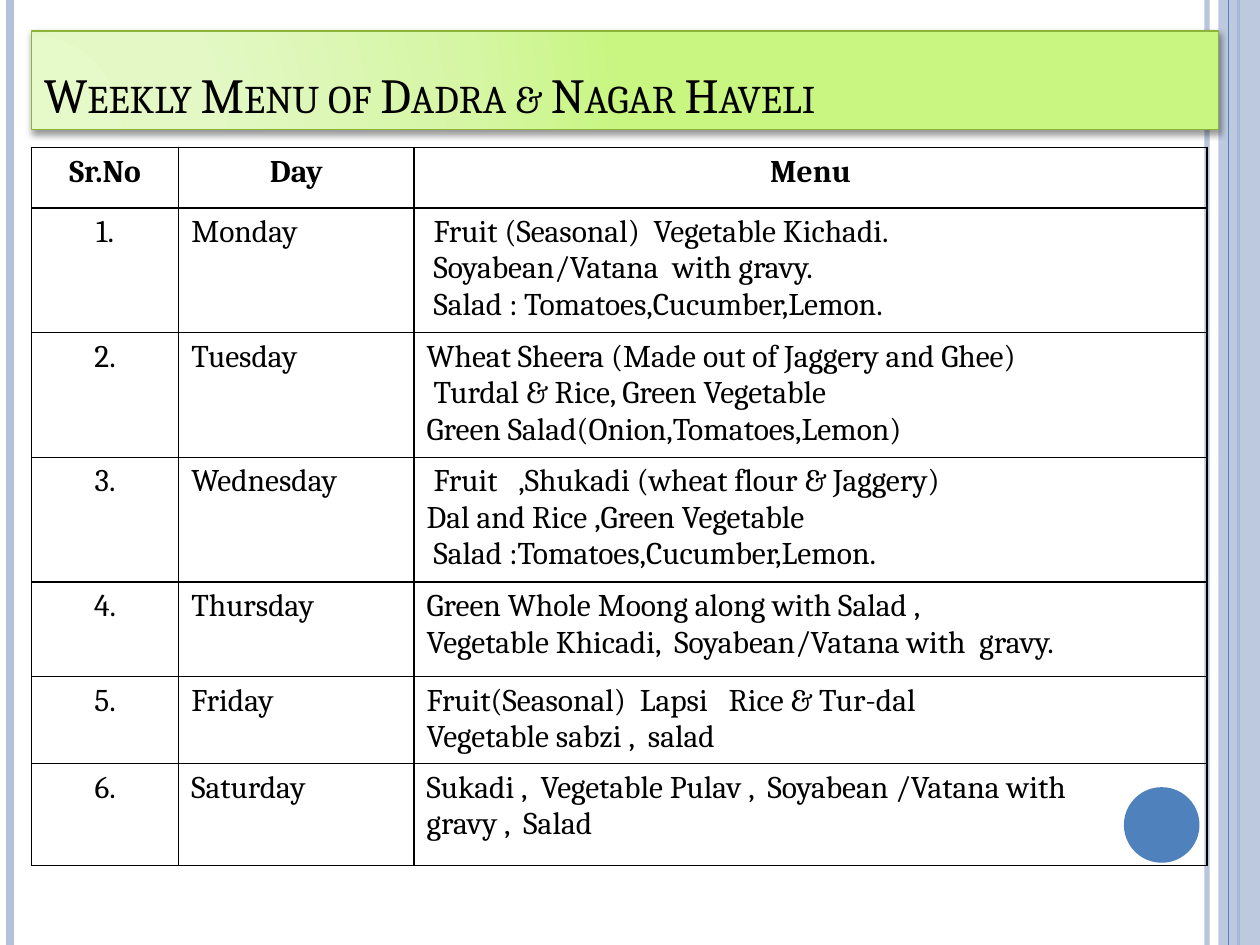
from lxml import etree
from pptx import Presentation
from pptx.dml.color import RGBColor
from pptx.enum.shapes import MSO_CONNECTOR, MSO_SHAPE
from pptx.enum.text import MSO_ANCHOR, PP_ALIGN
from pptx.oxml import parse_xml
from pptx.oxml.ns import nsdecls, qn
from pptx.util import Inches, Pt

STRAIGHT = MSO_CONNECTOR.STRAIGHT
RECTANGLE, OVAL = MSO_SHAPE.RECTANGLE, MSO_SHAPE.OVAL
BOTTOM = MSO_ANCHOR.BOTTOM
LEFT, CENTER, JUSTIFY = PP_ALIGN.LEFT, PP_ALIGN.CENTER, PP_ALIGN.JUSTIFY

FONT = "Cambria"
WIDTH, HEIGHT = Inches(10), Inches(7.5)
COLORS = {"pale": "B3C1DB", "blue": "4F81BD", "border": "8CB537", "ink": "000000"}
TITLE_STOPS = {0: "E5F9C9", 30: "E3F8C4", 75: "D5F6A3", 100: "C8F680"}

COLUMN_WIDTHS = [1.17, 1.87, 6.3]
ROW_HEIGHTS = [0.48, 0.99, 0.99, 0.99, 0.75, 0.69, 0.81]
HEADINGS = ["Sr.No", "Day", "Menu"]
MENU = [
    ("Monday", JUSTIFY, [" Fruit (Seasonal)  Vegetable Kichadi.",
                         " Soyabean/Vatana  with gravy.",
                         " Salad : Tomatoes,Cucumber,Lemon."]),
    ("Tuesday", JUSTIFY, ["Wheat Sheera (Made out of Jaggery and Ghee)",
                          " Turdal & Rice, Green Vegetable",
                          "Green Salad(Onion,Tomatoes,Lemon)"]),
    ("Wednesday", JUSTIFY, [" Fruit   ,Shukadi (wheat flour & Jaggery)",
                            "Dal and Rice ,Green Vegetable",
                            " Salad :Tomatoes,Cucumber,Lemon."]),
    ("Thursday", JUSTIFY, ["Green Whole Moong along with Salad ,",
                           "Vegetable Khicadi,  Soyabean/Vatana with  gravy."]),
    ("Friday", LEFT, ["Fruit(Seasonal)  Lapsi   Rice & Tur-dal",
                      "Vegetable sabzi ,  salad"]),
    ("Saturday", LEFT, ["Sukadi ,  Vegetable Pulav ,  Soyabean /Vatana with",
                        "gravy ,  Salad"]),
]


def to_emu(box):
    """Turn shares of the slide (left, top, width, height) into lengths."""
    return [round(share * side) for share, side in zip(box, (WIDTH, HEIGHT) * 2)]


def color(name):
    return RGBColor.from_string(COLORS[name])


def set_alpha(color_parent, percent):
    for element in color_parent.iter(qn("a:srgbClr")):
        etree.SubElement(element, qn("a:alpha")).set("val", str(percent * 1000))


def style_font(paragraph, size, bold=False):
    font = paragraph.font
    font.name, font.size, font.bold = FONT, Pt(size), bold
    font.color.rgb = color("ink")


def add_vertical_line(slide, x_share, color_name, weight, alpha=100):
    x = round(x_share * WIDTH)
    line = slide.shapes.add_connector(STRAIGHT, x, 0, x, HEIGHT)
    line.line.color.rgb = color(color_name)
    line.line.width = Pt(weight)
    properties = line._element.spPr
    if alpha < 100:
        set_alpha(properties, alpha)
    etree.SubElement(properties, qn("a:effectLst"))


def add_plain_shape(slide, kind, box, color_name):
    shape = slide.shapes.add_shape(kind, *to_emu(box))
    shape.shadow.inherit = False
    shape.fill.solid()
    shape.fill.fore_color.rgb = color(color_name)
    shape.line.fill.background()
    return shape


def add_side_decoration(slide):
    add_vertical_line(slide, 0.958, "pale", 3, alpha=93)
    add_vertical_line(slide, 0.008, "pale", 4.5)
    add_vertical_line(slide, 0.983, "blue", 1.5)
    band = add_plain_shape(slide, RECTANGLE, (0.967, 0, 0.033, 1), "pale")
    set_alpha(band._element.spPr, 87)
    add_vertical_line(slide, 0.975, "blue", 0.75)
    add_plain_shape(slide, OVAL, (0.892, 0.833, 0.06, 0.08), "blue")


def add_title(slide, box, text):
    banner = slide.shapes.add_shape(RECTANGLE, *to_emu(box))
    banner.shadow.inherit = False
    banner.fill.background()
    banner.line.color.rgb = color("border")
    banner.line.width = Pt(1)

    properties = banner._element.spPr
    stops = "".join(f'<a:gs pos="{position * 1000}"><a:srgbClr val="{value}"/></a:gs>'
                    for position, value in TITLE_STOPS.items())
    gradient = parse_xml(
        f'<a:gradFill {nsdecls("a")} rotWithShape="1"><a:gsLst>{stops}</a:gsLst>'
        '<a:path path="circle"><a:fillToRect l="5000" t="100000" r="120000" b="10000"/>'
        '</a:path></a:gradFill>')
    properties.replace(properties.find(qn("a:noFill")), gradient)
    shadow = parse_xml(
        f'<a:outerShdw {nsdecls("a")} blurRad="{Pt(4)}" dist="{Pt(2)}" dir="5400000" '
        f'rotWithShape="0"><a:srgbClr val="{COLORS["ink"]}"><a:alpha val="40000"/>'
        '</a:srgbClr></a:outerShdw>')
    properties.find(qn("a:effectLst")).append(shadow)

    frame = banner.text_frame
    frame.word_wrap = True
    frame.vertical_anchor = BOTTOM
    paragraph = frame.paragraphs[0]
    paragraph.alignment = LEFT
    style_font(paragraph, 28)
    run = paragraph.add_run()
    run.text = text
    run._r.get_or_add_rPr().set("cap", "small")


def add_cell_borders(cell):
    properties = cell._tc.get_or_add_tcPr()
    for index, side in enumerate(("lnL", "lnR", "lnT", "lnB")):
        properties.insert(index, parse_xml(
            f'<a:{side} {nsdecls("a")} w="{Pt(1)}"><a:solidFill>'
            f'<a:srgbClr val="{COLORS["ink"]}"/></a:solidFill></a:{side}>'))


def fill_cell(cell, lines, alignment, bold=False):
    cell.fill.background()
    add_cell_borders(cell)
    cell.text = "\n".join(lines)
    for paragraph in cell.text_frame.paragraphs:
        paragraph.alignment = alignment
        style_font(paragraph, 18, bold)


def add_menu_table(slide, box):
    left, top, width, height = to_emu(box)
    table = slide.shapes.add_table(len(ROW_HEIGHTS), len(COLUMN_WIDTHS),
                                   left, top, width, height).table
    table.first_row = table.horz_banding = False
    for column, share in zip(table.columns, COLUMN_WIDTHS):
        column.width = round(width * share / sum(COLUMN_WIDTHS))
    for row, share in zip(table.rows, ROW_HEIGHTS):
        row.height = round(height * share / sum(ROW_HEIGHTS))

    for column, heading in enumerate(HEADINGS):
        fill_cell(table.cell(0, column), [heading], CENTER, bold=True)
    for number, (day, alignment, dishes) in enumerate(MENU, start=1):
        fill_cell(table.cell(number, 0), [f"{number}."], CENTER)
        fill_cell(table.cell(number, 1), [day], LEFT)
        fill_cell(table.cell(number, 2), dishes, alignment)


def main():
    presentation = Presentation()
    presentation.slide_width, presentation.slide_height = WIDTH, HEIGHT
    slide = presentation.slides.add_slide(presentation.slide_layouts[6])
    add_side_decoration(slide)
    add_title(slide, (0.025, 0.033, 0.942, 0.104), "Weekly Menu of Dadra & Nagar Haveli")
    add_menu_table(slide, (0.025, 0.156, 0.933, 0.76))
    presentation.save("out.pptx")


if __name__ == "__main__":
    main()
